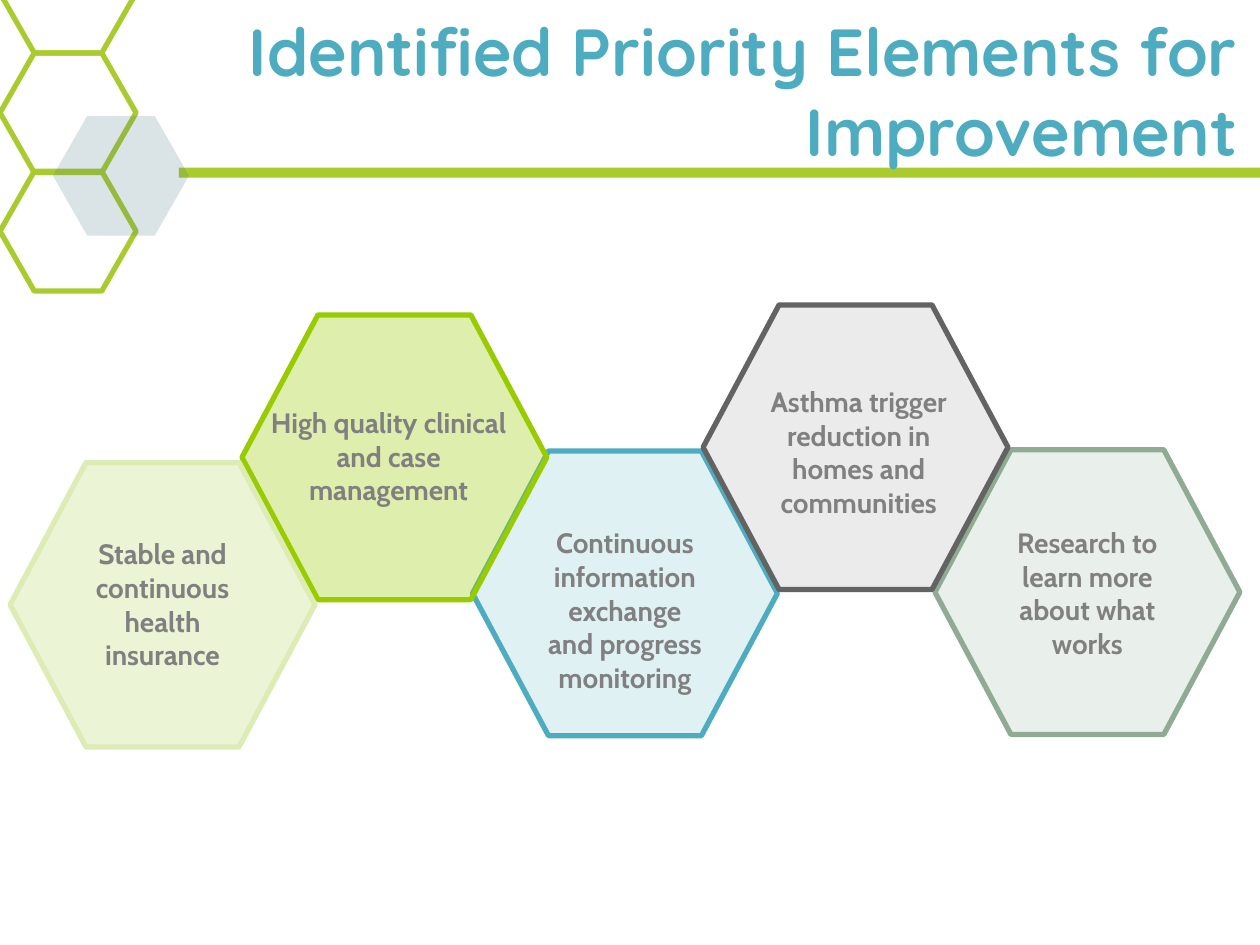
from lxml import etree
from pptx import Presentation
from pptx.dml.color import RGBColor
from pptx.enum.shapes import MSO_SHAPE
from pptx.enum.text import MSO_ANCHOR, PP_ALIGN
from pptx.oxml.ns import qn
from pptx.util import Inches, Pt

HEXAGON = MSO_SHAPE.HEXAGON
RECTANGLE = MSO_SHAPE.RECTANGLE
MIDDLE = MSO_ANCHOR.MIDDLE
CENTER = PP_ALIGN.CENTER
RIGHT = PP_ALIGN.RIGHT

LIME = RGBColor(0xAA, 0xCB, 0x2E)
SLATE = RGBColor(0x49, 0x76, 0x7F)
TEAL = RGBColor(0x4D, 0xAC, 0xBF)
SAGE = RGBColor(0x8F, 0xAB, 0x93)
GREEN = RGBColor(0x99, 0xCC, 0x00)
PALE_GREEN = RGBColor(0xDD, 0xEC, 0xB4)
SILVER = RGBColor(0xC1, 0xC1, 0xC1)
CHARCOAL = RGBColor(0x63, 0x63, 0x63)
GRAY = RGBColor(0x80, 0x80, 0x80)

SMALL_HEXAGON = (1.08, 0.95, 0.286)
LARGE_HEXAGON = (2.42, 2.26, 0.267)

PRIORITY_HEXAGONS = [
    (3.75, 3.58, TEAL, 17, TEAL),
    (7.42, 3.57, SAGE, 19, SAGE),
    (1.92, 2.5, GREEN, 32, GREEN),
    (0.08, 3.67, PALE_GREEN, 56, PALE_GREEN),
    (5.58, 2.42, SILVER, 32, CHARCOAL),
]

PRIORITY_LABELS = [
    (0.54, 4.21, 1.5, 1.17, "Stable and continuous health insurance"),
    (2, 3.17, 2.17, 0.9, "High quality clinical and case management"),
    (4.21, 3.99, 1.5, 1.7,
     "Continuous information exchange and progress monitoring"),
    (5.92, 3, 1.79, 1.17,
     "Asthma trigger reduction in homes and communities"),
    (7.88, 4.12, 1.5, 1.17, "Research to learn more about what works"),
]


def add_filled_shape(slide, kind, left, top, width, height,
                     fill=None, opacity=100, line=None):
    shape = slide.shapes.add_shape(
        kind, Inches(left), Inches(top), Inches(width), Inches(height))
    shape.shadow.inherit = False
    if fill is None:
        shape.fill.background()
    else:
        shape.fill.solid()
        shape.fill.fore_color.rgb = fill
        if opacity < 100:
            color = shape.fill._xPr.find(qn("a:solidFill"))[0]
            alpha = etree.SubElement(color, qn("a:alpha"))
            alpha.set("val", str(opacity * 1000))
    if line is None:
        shape.line.fill.background()
    else:
        shape.line.color.rgb = line
        shape.line.width = Pt(3)
    return shape


def add_hexagon(slide, left, top, size, **style):
    width, height, inset = size
    shape = add_filled_shape(slide, HEXAGON, left, top, width, height, **style)
    shape.adjustments[0] = inset


def add_text(slide, left, top, width, height, text, font_name, size, color,
             alignment):
    box = slide.shapes.add_textbox(
        Inches(left), Inches(top), Inches(width), Inches(height))
    text_frame = box.text_frame
    text_frame.word_wrap = True
    text_frame.vertical_anchor = MIDDLE
    text_frame.text = text
    paragraph = text_frame.paragraphs[0]
    paragraph.alignment = alignment
    font = paragraph.runs[0].font
    font.name = font_name
    font.size = Pt(size)
    font.bold = True
    font.color.rgb = color


def add_header(slide):
    for top in (0.42, 1.36):
        add_hexagon(slide, 0, top, SMALL_HEXAGON, line=LIME)
    add_filled_shape(slide, RECTANGLE, 1.42, 1.33, 8.75, 0.08, fill=LIME)
    add_hexagon(slide, 0, -0.53, SMALL_HEXAGON, line=LIME)
    add_hexagon(slide, 0.42, 0.92, SMALL_HEXAGON, fill=SLATE, opacity=20)
    add_text(slide, 0.92, 0.17, 9, 1.08,
             "Identified Priority Elements for Improvement",
             "Quicksand", 38, TEAL, RIGHT)


def add_priorities(slide):
    for left, top, fill, opacity, line in PRIORITY_HEXAGONS:
        add_hexagon(slide, left, top, LARGE_HEXAGON,
                    fill=fill, opacity=opacity, line=line)
    for left, top, width, height, text in PRIORITY_LABELS:
        add_text(slide, left, top, width, height, text,
                 "Cabin", 16, GRAY, CENTER)


def main():
    presentation = Presentation()
    presentation.slide_width = Inches(10)
    presentation.slide_height = Inches(7.5)
    slide = presentation.slides.add_slide(presentation.slide_layouts[6])
    add_header(slide)
    add_priorities(slide)
    presentation.save("out.pptx")


if __name__ == "__main__":
    main()
